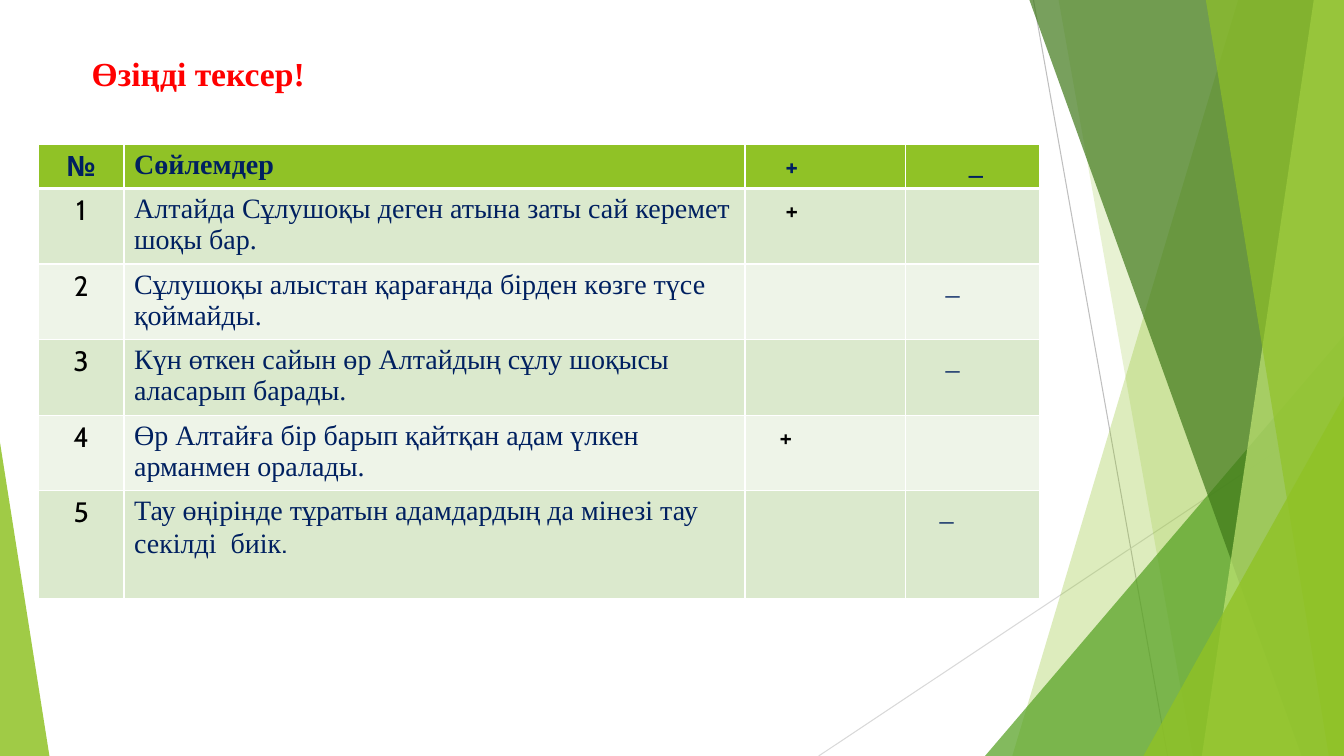
"""Build a self-check slide with a sentence table and green facet decoration."""
from lxml.etree import SubElement
from pptx import Presentation
from pptx.dml.color import RGBColor
from pptx.enum.shapes import MSO_CONNECTOR, MSO_SHAPE
from pptx.enum.text import MSO_ANCHOR, MSO_AUTO_SIZE, PP_ALIGN
from pptx.oxml.ns import qn
from pptx.util import Inches, Pt

COLORS = {
    "red": "FF0000", "navy": "002060", "black": "000000", "white": "FFFFFF",
    "lime": "90C226", "green": "54A021", "forest": "3F7819", "pale": "C0E474",
    "band_dark": "DBE9CD", "band_light": "EEF4E8",
    "gray": "BFBFBF", "light_gray": "D9D9D9",
}
SERIF, SANS = "Times New Roman", "Cabin"
WIDTH, HEIGHT = 13.33, 7.5

LINES = [
    ((10.25, 0), (11.58, HEIGHT), "gray"),
    ((WIDTH, 4.03), (8.12, HEIGHT), "light_gray"),
]
FACETS = [
    (12.28, 10.04, "lime", 30),
    (10.5, 11.83, "lime", 20),
    (9.77, 3.33, 3.56, 4.17, 1, "green", 72),
    (10.21, 12.91, "forest", 70),
    (13.03, 11.92, "pale", 70),
    (11.96, 13.18, "lime", 65),
    (11.34, 3.93, 1.99, 3.57, 1, "lime", 80),
    (0, 4.39, 0.49, 3.11, 0, "lime", 85),
]
COLUMN_WIDTHS = [0.85, 6.16, 1.59, 1.33]
ROW_HEIGHTS = [0.43, 0.75, 0.75, 0.75, 0.75, 1.07]
SENTENCES = [
    ("Алтайда Сұлушоқы деген атына заты сай керемет шоқы бар.", "+", 0.4),
    ("Сұлушоқы алыстан қарағанда бірден көзге түсе қоймайды.", "_", 0.4),
    ("Күн өткен сайын өр Алтайдың сұлу шоқысы аласарып барады.", "_", 0.4),
    ("Өр Алтайға бір барып қайтқан адам үлкен арманмен оралады.", "+", 0.34),
    ("Тау өңірінде тұратын адамдардың да мінезі тау секілді  биік.", "_", 0.34),
]


def rgb(name):
    """Return the named colour."""
    return RGBColor.from_string(COLORS[name])


def style_font(font, name, size, color, bold=False):
    """Set the look of a font."""
    font.name, font.size, font.bold = name, Pt(size), bold
    font.color.rgb = rgb(color)


def paint(shape, color, opacity):
    """Fill a shape with a translucent colour and no outline."""
    shape.shadow.inherit = False
    shape.line.fill.background()
    shape.fill.solid()
    shape.fill.fore_color.rgb = rgb(color)
    color_element = shape.fill._xPr.find(qn("a:solidFill"))[0]
    SubElement(color_element, qn("a:alpha"), val=str(opacity * 1000))


def add_line(slide, start, end, color):
    """Draw a thin straight line."""
    line = slide.shapes.add_connector(
        MSO_CONNECTOR.STRAIGHT, *(Inches(value) for value in start + end))
    line.line.color.rgb = rgb(color)
    line.line.width = Pt(0.75)
    SubElement(line._element.spPr, qn("a:effectLst"))


def add_facet(slide, top_left, bottom_left, color, opacity):
    """Draw a full-height facet that reaches the right slide edge."""
    points = [(top_left, 0), (WIDTH, 0), (WIDTH, HEIGHT), (bottom_left, HEIGHT)]
    corners = [(Inches(x), Inches(y)) for x, y in points]
    builder = slide.shapes.build_freeform(*corners[0])
    builder.add_line_segments(corners[1:], close=True)
    paint(builder.convert_to_shape(), color, opacity)


def add_triangle(slide, left, top, width, height, apex, color, opacity):
    """Draw a triangle with its apex at a share of its width."""
    shape = slide.shapes.add_shape(
        MSO_SHAPE.ISOSCELES_TRIANGLE,
        Inches(left), Inches(top), Inches(width), Inches(height))
    shape.adjustments[0] = apex
    paint(shape, color, opacity)


def set_title(slide, text):
    """Place and format the slide title."""
    title = slide.shapes.title
    title.left, title.top = Inches(0.81), Inches(0.47)
    title.width, title.height = Inches(2.33), Inches(0.5)
    frame = title.text_frame
    frame.text = text
    frame.word_wrap = False
    frame.auto_size = MSO_AUTO_SIZE.NONE
    frame.vertical_anchor = MSO_ANCHOR.TOP
    frame.paragraphs[0].alignment = PP_ALIGN.LEFT
    style_font(frame.paragraphs[0].runs[0].font, SERIF, 24, "red", True)


def set_borders(cell, row):
    """Give a cell white borders, thick under the header row."""
    widths = {"L": 1, "R": 1, "T": 3 if row == 1 else 1, "B": 3 if row == 0 else 1}
    properties = cell._tc.get_or_add_tcPr()
    for side, width in widths.items():
        border = SubElement(properties, qn(f"a:ln{side}"), w=str(Pt(width)))
        fill = SubElement(border, qn("a:solidFill"))
        SubElement(fill, qn("a:srgbClr"), val=COLORS["white"])


def write_cell(cell, text, font_name, color, bold=False, centered=False, indent=0.1):
    """Write text into a table cell."""
    cell.text_frame.text = text
    cell.margin_left = Inches(indent)
    paragraph = cell.text_frame.paragraphs[0]
    paragraph.alignment = PP_ALIGN.CENTER if centered else PP_ALIGN.LEFT
    for run in paragraph.runs:
        style_font(run.font, font_name, 20, color, bold)


def write_sentence_row(table, number, sentence, mark, indent):
    """Write a numbered sentence and its plus or minus mark."""
    write_cell(table.cell(number, 0), str(number), SANS, "black", centered=True)
    write_cell(table.cell(number, 1), sentence, SERIF, "navy")
    if mark == "+":
        write_cell(table.cell(number, 2), mark, SANS, "black", indent=indent)
    else:
        write_cell(table.cell(number, 3), mark, SERIF, "navy", indent=indent)


def add_sentence_table(slide):
    """Add the table of sentences with their marks."""
    table = slide.shapes.add_table(
        len(ROW_HEIGHTS), len(COLUMN_WIDTHS), Inches(0.38), Inches(1.43),
        Inches(sum(COLUMN_WIDTHS)), Inches(sum(ROW_HEIGHTS))).table
    for column, width in zip(table.columns, COLUMN_WIDTHS):
        column.width = Inches(width)
    for index, (row, height) in enumerate(zip(table.rows, ROW_HEIGHTS)):
        row.height = Inches(height)
        band = "band_dark" if index % 2 else "band_light"
        for cell in row.cells:
            set_borders(cell, index)
            cell.fill.solid()
            cell.fill.fore_color.rgb = rgb("lime" if index == 0 else band)
    write_cell(table.cell(0, 0), "№", SANS, "navy", True, centered=True)
    write_cell(table.cell(0, 1), "Сөйлемдер", SERIF, "navy", True)
    write_cell(table.cell(0, 2), "+", SANS, "navy", True, indent=0.4)
    write_cell(table.cell(0, 3), "_", SERIF, "navy", True, centered=True, indent=0.17)
    for number, (sentence, mark, indent) in enumerate(SENTENCES, 1):
        write_sentence_row(table, number, sentence, mark, indent)
    ending = table.cell(len(SENTENCES), 1).text_frame.paragraphs[0]
    ending.runs[0].text = ending.text.removesuffix(".")
    period = ending.add_run()
    period.text = "."
    style_font(period.font, SANS, 20, "navy")


def main():
    """Build and save the slide."""
    presentation = Presentation()
    presentation.slide_width, presentation.slide_height = Inches(WIDTH), Inches(HEIGHT)
    slide = presentation.slides.add_slide(presentation.slide_layouts[5])
    for start, end, color in LINES:
        add_line(slide, start, end, color)
    for facet in FACETS:
        draw = add_facet if len(facet) == 4 else add_triangle
        draw(slide, *facet)
    set_title(slide, "Өзіңді тексер!")
    add_sentence_table(slide)
    presentation.save("out.pptx")


if __name__ == "__main__":
    main()
